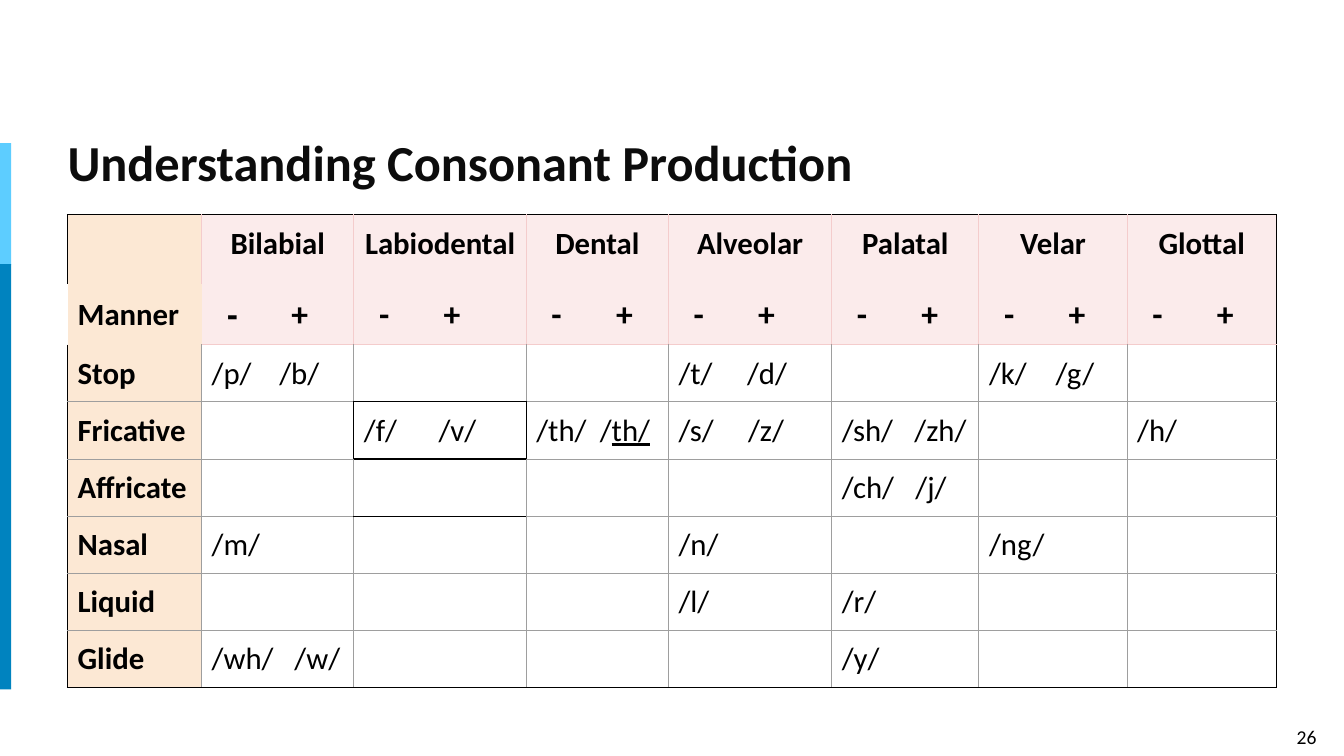
"""Build a slide with a table of English consonants by place and manner."""
from lxml.etree import SubElement
from pptx import Presentation
from pptx.dml.color import RGBColor
from pptx.enum.shapes import MSO_SHAPE
from pptx.enum.text import MSO_ANCHOR, PP_ALIGN
from pptx.oxml.ns import qn
from pptx.util import Inches, Pt

COLORS = {
    "ink": "000000", "title": "0C0C0C", "grid": "9E9E9E", "pink": "F4CCCC",
    "place": "FBEBEB", "manner": "FCE8D4", "sky": "5DCDFF", "ocean": "0083BF",
    "white": "FFFFFF",
}
TITLE = "Understanding Consonant Production"
PAGE_NUMBER = "26"
BARS = [(1.42, 1.21, "sky"), (2.62, 4.22, "ocean")]
PLACES = ["Bilabial", "Labiodental", "Dental", "Alveolar", "Palatal", "Velar", "Glottal"]
MANNERS = ["Stop", "Fricative", "Affricate", "Nasal", "Liquid", "Glide"]
SOUNDS = {
    ("Stop", "Bilabial"): ("/p/", "/b/", 0.67),
    ("Stop", "Alveolar"): ("/t/", "/d/", 0.68),
    ("Stop", "Velar"): ("/k/", "/g/", 0.66),
    ("Fricative", "Labiodental"): ("/f/", "/v/", 0.74),
    ("Fricative", "Dental"): ("/th/", "/", 0.63, "th/"),
    ("Fricative", "Alveolar"): ("/s/", "/z/", 0.69),
    ("Fricative", "Palatal"): ("/sh/", "/zh/", 0.72),
    ("Fricative", "Glottal"): ("/h/",),
    ("Affricate", "Palatal"): ("/ch/", "/j/", 0.73),
    ("Nasal", "Bilabial"): ("/m/",),
    ("Nasal", "Alveolar"): ("/n/",),
    ("Nasal", "Velar"): ("/ng/",),
    ("Liquid", "Alveolar"): ("/l/",),
    ("Liquid", "Palatal"): ("/r/",),
    ("Glide", "Bilabial"): ("/wh/", "/w/", 0.82),
    ("Glide", "Palatal"): ("/y/",),
}
COLUMN_WIDTHS = [1.33, 1.51, 1.71, 1.41, 1.62, 1.46, 1.47, 1.48]
ROW_HEIGHTS = [0.69, 0.57] + [0.54] * len(MANNERS)
LAST_COLUMN, LAST_ROW = len(COLUMN_WIDTHS), len(ROW_HEIGHTS)
SIGN_INDENT, SIGN_TAB = 0.15, 0.64
PADDING = 0.1
PLAIN_TABLE_STYLE = "{2D5ABB26-0587-4C30-8999-92F81FD0307C}"


def color(name):
    return RGBColor.from_string(COLORS[name])


def add_span(para, text, size, bold=False, ink="ink", font="Calibri", underline=False):
    span = para.add_run()
    span.text = text
    span.font.name, span.font.size = font, Pt(size)
    span.font.bold, span.font.underline = bold, underline
    span.font.color.rgb = color(ink)


def add_tab_stop(para, position):
    stops = SubElement(para._p.get_or_add_pPr(), qn("a:tabLst"))
    SubElement(stops, qn("a:tab"), pos=str(Inches(position)), algn="l")


def add_box(page, left, top, width, height, margins):
    box = page.shapes.add_textbox(*map(Inches, (left, top, width, height)))
    frame = box.text_frame
    frame.word_wrap = True
    frame.margin_left, frame.margin_top, frame.margin_right, frame.margin_bottom = map(Inches, margins)
    return box


def vertical_edge(row, x):
    if x == LAST_COLUMN:
        return "ink"
    if row == 1 and x < 2:
        return None
    if x == 0 or (row == 3 and x in (2, 3)):
        return "ink"
    return "pink" if row < 2 else "grid"


def horizontal_edge(y, column):
    if y in (0, LAST_ROW) or (column == 2 and y in (3, 4, 5)):
        return "ink"
    if y == 1 or (y == 2 and column == 0):
        return None
    return "pink" if y == 2 else "grid"


def draw_borders(cell, row, column):
    edges = {
        "L": vertical_edge(row, column), "R": vertical_edge(row, column + 1),
        "T": horizontal_edge(row, column), "B": horizontal_edge(row + 1, column),
    }
    properties = cell._tc.get_or_add_tcPr()
    for side, name in edges.items():
        width = Pt(1 if name == "ink" else 0.75)
        line = SubElement(properties, qn(f"a:ln{side}"), w=str(width))
        if name:
            fill = SubElement(line, qn("a:solidFill"))
            SubElement(fill, qn("a:srgbClr"), val=COLORS[name])
        else:
            SubElement(line, qn("a:noFill"))


def write_cell(cell, row, column):
    para = cell.text_frame.paragraphs[0]
    if column == 0:
        if row == 1:
            cell.vertical_anchor = MSO_ANCHOR.MIDDLE
        if row > 0:
            add_span(para, (["Manner"] + MANNERS)[row - 1], 22, bold=True)
    elif row == 0:
        para.alignment = PP_ALIGN.CENTER
        add_span(para, PLACES[column - 1], 22, bold=True)
    elif row == 1:
        cell.margin_left = Inches(PADDING + SIGN_INDENT)
        add_tab_stop(para, SIGN_TAB)
        add_span(para, "-", 24, bold=True, font="Arial" if column == 1 else "Calibri")
        add_span(para, "\t+", 24, bold=True)
    else:
        sounds = SOUNDS.get((MANNERS[row - 2], PLACES[column - 1]), ())
        if len(sounds) > 1:
            add_tab_stop(para, sounds[2])
        if sounds:
            add_span(para, "\t".join(sounds[:2]), 22)
        for marked in sounds[3:]:
            add_span(para, marked, 22, underline=True)


def add_consonant_table(page):
    frame = page.shapes.add_table(
        LAST_ROW, LAST_COLUMN, Inches(0.67), Inches(2.13),
        Inches(sum(COLUMN_WIDTHS)), Inches(sum(ROW_HEIGHTS)))
    table = frame.table
    table.first_row = table.horz_banding = False
    table._tbl.tblPr.find(qn("a:tableStyleId")).text = PLAIN_TABLE_STYLE
    for column, width in enumerate(COLUMN_WIDTHS):
        table.columns[column].width = Inches(width)
    for row, height in enumerate(ROW_HEIGHTS):
        table.rows[row].height = Inches(height)
        for column in range(LAST_COLUMN):
            cell = table.cell(row, column)
            cell.margin_left = cell.margin_right = Inches(PADDING)
            cell.margin_top = cell.margin_bottom = Inches(PADDING)
            draw_borders(cell, row, column)
            if column == 0 or row < 2:
                cell.fill.solid()
                cell.fill.fore_color.rgb = color("manner" if column == 0 else "place")
            else:
                cell.fill.background()
            write_cell(cell, row, column)


def main():
    deck = Presentation()
    deck.slide_width, deck.slide_height = Inches(13.33), Inches(7.5)
    page = deck.slides.add_slide(deck.slide_layouts[6])

    number = add_box(page, 12.63, 7.14, 0.66, 0.34, (0.1, 0.05, 0.1, 0.05))
    number.line.color.rgb, number.line.width = color("white"), Pt(0.75)
    para = number.text_frame.paragraphs[0]
    para.alignment = PP_ALIGN.CENTER
    add_span(para, PAGE_NUMBER, 14)

    for top, height, name in BARS:
        bar = page.shapes.add_shape(
            MSO_SHAPE.RECTANGLE, Inches(-0.03), Inches(top), Inches(0.14), Inches(height))
        bar.shadow.inherit = False
        bar.fill.solid()
        bar.fill.fore_color.rgb = color(name)
        bar.line.fill.background()

    title = add_box(page, 0.67, 1.27, 12.01, 0.63, (0, 0.2, 0.1, 0.05))
    title.text_frame.vertical_anchor = MSO_ANCHOR.MIDDLE
    para = title.text_frame.paragraphs[0]
    para.line_spacing = 0.8
    add_span(para, TITLE, 36, bold=True, ink="title")

    add_consonant_table(page)
    deck.save("out.pptx")


if __name__ == "__main__":
    main()
